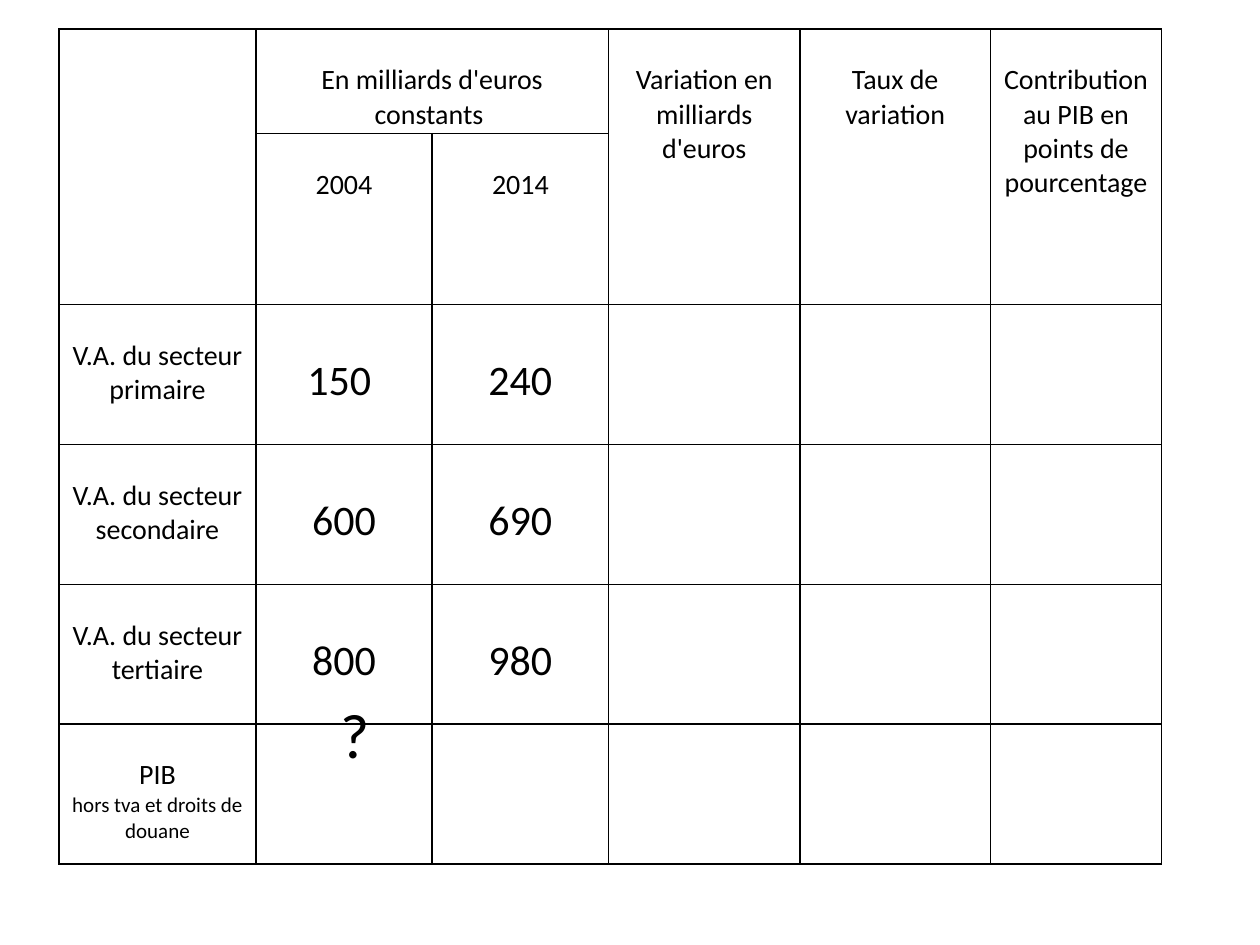
from dataclasses import dataclass

from lxml import etree
from pptx import Presentation
from pptx import util as u
from pptx.dml.color import RGBColor
from pptx.enum import text
from pptx.oxml.ns import qn

FONT = "Calibri"
INK = "000000"
LABEL, FIGURE, NOTE, QUESTION = 16, 24, 12, 36
LINE_HEIGHT = 1.22  # share of the font size

COLUMNS = (1.56, 1.4, 1.4, 1.52, 1.51, 1.36)
ROWS = (0.83, 0.83, 1.11, 1.11, 1.11, 1.11)
TABLE_LEFT, TABLE_TOP = 0.47, 0.23


@dataclass(frozen=True)
class Line:
    wording: str
    size: int = LABEL


@dataclass(frozen=True)
class Entry:
    row: int
    column: int
    lines: tuple[Line, ...] = ()
    rows: int = 1
    columns: int = 1


@dataclass(frozen=True)
class Sector:
    name: str
    value_2004: str
    value_2014: str


HEADINGS = (
    Entry(0, 0, rows=2),
    Entry(0, 1, (Line("En milliards d'euros constants "),), columns=2),
    Entry(0, 3, (Line("Variation en milliards d'euros"),), rows=2),
    Entry(0, 4, (Line("Taux de variation"),), rows=2),
    Entry(0, 5, (Line("Contribution au PIB en points de pourcentage"),), rows=2),
    Entry(1, 1, (Line("2004"),)),
    Entry(1, 2, (Line("2014"),)),
)
SECTORS = (
    Sector("primaire", "150 ", "240"),
    Sector("secondaire", "600", "690"),
    Sector("tertiaire", "800", "980"),
)
GDP = Entry(5, 0, (Line("PIB"), Line("hors tva et droits de douane", NOTE)))


def colour(value: str) -> RGBColor:
    return RGBColor.from_string(value)


def add_run(paragraph, wording: str, size: int) -> None:
    run = paragraph.add_run()
    run.text = wording
    run.font.name = FONT
    run.font.size = u.Pt(size)
    run.font.color.rgb = colour(INK)


def style_cell(cell) -> None:
    """Give the cell a thin outline and no fill."""
    properties = cell._tc.get_or_add_tcPr()
    for side in ("lnL", "lnR", "lnT", "lnB"):
        border = etree.SubElement(properties, qn(f"a:{side}"), w=str(u.Pt(1)))
        fill = etree.SubElement(border, qn("a:solidFill"))
        etree.SubElement(fill, qn("a:srgbClr"), val=INK)
    cell.fill.background()


def write_entry(table, entry: Entry) -> None:
    """Merge the entry's span and write its lines one line below the cell top."""
    cell = table.cell(entry.row, entry.column)
    if entry.rows * entry.columns > 1:
        cell.merge(table.cell(entry.row + entry.rows - 1,
                              entry.column + entry.columns - 1))
    if not entry.lines:
        return
    cell.margin_left = cell.margin_right = u.Inches(0.07)
    cell.margin_top = u.Pt(entry.lines[0].size * LINE_HEIGHT)
    cell.margin_bottom = 0
    frame = cell.text_frame
    for index, line in enumerate(entry.lines):
        paragraph = frame.add_paragraph() if index else frame.paragraphs[0]
        paragraph.alignment = text.PP_ALIGN.CENTER
        add_run(paragraph, line.wording, line.size)


def sector_entries(row: int, sector: Sector) -> tuple[Entry, ...]:
    return (
        Entry(row, 0, (Line(f"V.A. du secteur {sector.name}"),)),
        Entry(row, 1, (Line(sector.value_2004, FIGURE),)),
        Entry(row, 2, (Line(sector.value_2014, FIGURE),)),
    )


def add_value_table(slide) -> None:
    table = slide.shapes.add_table(
        len(ROWS), len(COLUMNS), u.Inches(TABLE_LEFT), u.Inches(TABLE_TOP),
        u.Inches(sum(COLUMNS)), u.Inches(sum(ROWS))).table
    table.first_row = table.horz_banding = False
    for column, width in zip(table.columns, COLUMNS):
        column.width = u.Inches(width)
    for row, height in zip(table.rows, ROWS):
        row.height = u.Inches(height)
    for cell in table.iter_cells():
        style_cell(cell)
    for entry in (*HEADINGS, GDP):
        write_entry(table, entry)
    for row, sector in enumerate(SECTORS, start=2):
        for entry in sector_entries(row, sector):
            write_entry(table, entry)


def add_question(slide) -> None:
    box = slide.shapes.add_textbox(
        u.Inches(2.5), u.Inches(5.47), u.Inches(0.7), u.Inches(0.71))
    frame = box.text_frame
    frame.word_wrap = True
    frame.auto_size = text.MSO_AUTO_SIZE.SHAPE_TO_FIT_TEXT
    add_run(frame.paragraphs[0], " ", 32)
    add_run(frame.paragraphs[0], "?", QUESTION)


def main() -> None:
    deck = Presentation()
    deck.slide_width, deck.slide_height = u.Inches(10), u.Inches(7.5)
    slide = deck.slides.add_slide(deck.slide_layouts[6])
    add_value_table(slide)
    add_question(slide)
    deck.save("out.pptx")


if __name__ == "__main__":
    main()
